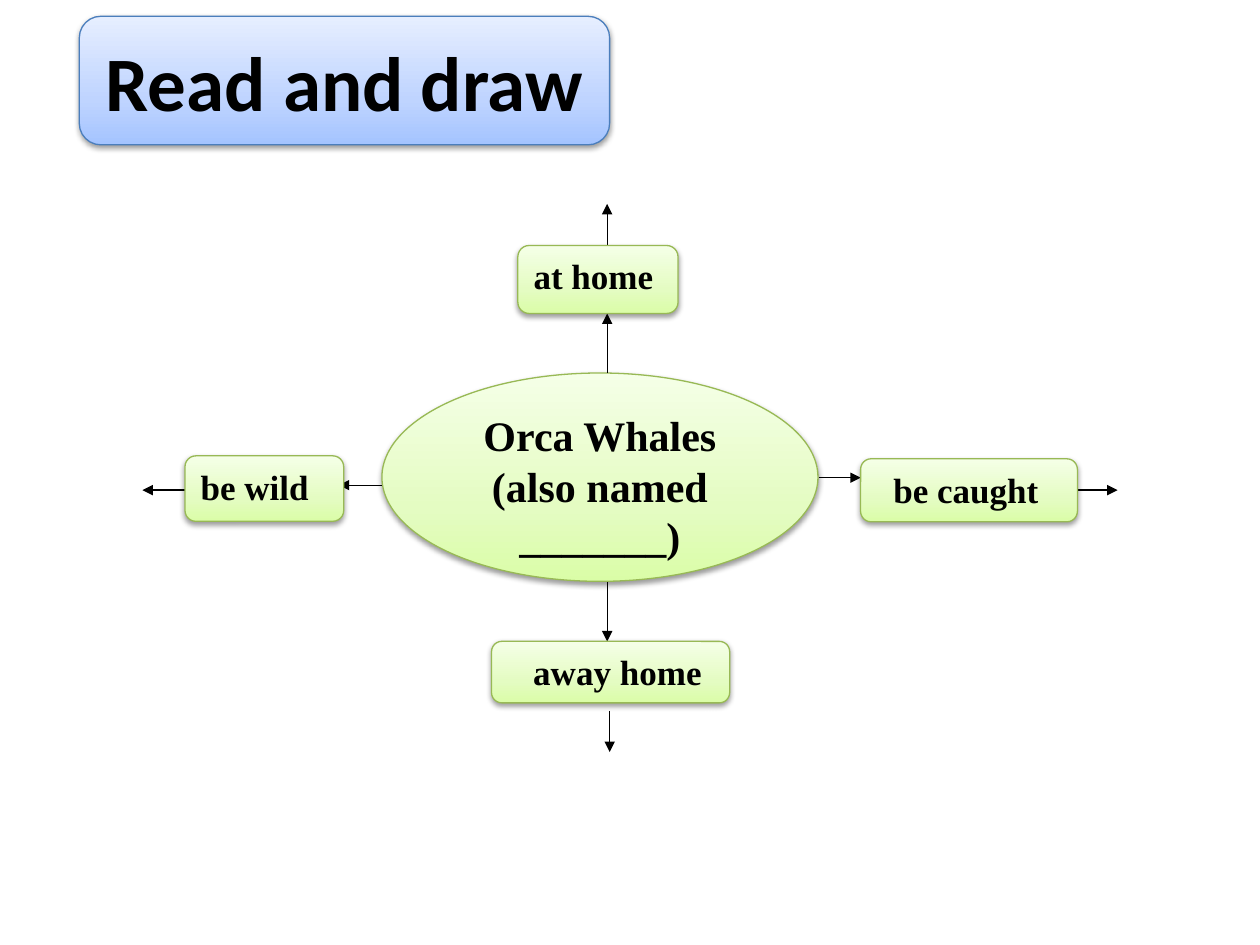
from dataclasses import dataclass

from lxml import etree
from pptx import Presentation
from pptx.dml.color import RGBColor
from pptx.enum.shapes import MSO_CONNECTOR, MSO_SHAPE
from pptx.enum.text import MSO_ANCHOR, PP_ALIGN
from pptx.oxml import parse_xml
from pptx.oxml.ns import nsdecls, qn
from pptx.util import Cm, Pt

ELLIPSE = MSO_SHAPE.OVAL
ROUNDED = MSO_SHAPE.ROUNDED_RECTANGLE
STRAIGHT = MSO_CONNECTOR.STRAIGHT
CENTER = PP_ALIGN.CENTER
JUSTIFY = PP_ALIGN.JUSTIFY
TOP = MSO_ANCHOR.TOP
MIDDLE = MSO_ANCHOR.MIDDLE


@dataclass
class Theme:
    ink = RGBColor.from_string("000000")
    green = ("DAFDA7", "E4FCC2", "F5FFE7")
    green_line = RGBColor.from_string("98B955")
    blue = ("A4C4FF", "BFD4FF", "E6EEFF")
    blue_line = RGBColor.from_string("4B7EBC")
    heading_font = "Calibri"
    body_font = "Times New Roman"
    heading_size = Pt(44)
    topic_size = Pt(24)
    branch_size = Pt(20)
    line_width = Pt(0.75)


theme = Theme()


def add_panel(kind, place, colours, line_colour):
    panel = page.shapes.add_shape(kind, *map(Cm, place))
    properties = panel._element.spPr
    stops = "".join(
        f'<a:gs pos="{position}"><a:srgbClr val="{colour}"/></a:gs>'
        for position, colour in zip((0, 35000, 100000), colours)
    )
    properties.append(parse_xml(
        f'<a:gradFill {nsdecls("a")} rotWithShape="1"><a:gsLst>{stops}</a:gsLst>'
        '<a:lin ang="16200000" scaled="0"/></a:gradFill>'
    ))
    panel.line.color.rgb = line_colour
    panel.line.width = theme.line_width
    properties.append(parse_xml(
        f'<a:effectLst {nsdecls("a")}>'
        '<a:outerShdw blurRad="40000" dist="20000" dir="5400000" rotWithShape="0">'
        '<a:srgbClr val="000000"><a:alpha val="38000"/></a:srgbClr>'
        '</a:outerShdw></a:effectLst>'
    ))
    return panel


def write(shape, lines, font, size, alignment, anchor):
    frame = shape.text_frame
    frame.word_wrap = True
    frame.vertical_anchor = anchor
    frame.text = "\n".join(lines)
    for para in frame.paragraphs:
        para.alignment = alignment
        para.font.name = font
        para.font.size = size
        para.font.bold = True
        para.font.color.rgb = theme.ink


deck = Presentation()
deck.slide_width = Cm(25.4)
deck.slide_height = Cm(19.05)
page = deck.slides.add_slide(deck.slide_layouts[5])

topic = add_panel(ELLIPSE, (7.7, 7.52, 8.79, 4.2), theme.green, theme.green_line)
write(topic, ["Orca Whales", "(also named _______)"],
      theme.body_font, theme.topic_size, CENTER, TOP)

arrows = [
    (12.24, 7.52, 12.24, 6.32),
    (7.7, 9.78, 6.83, 9.78),
    (16.51, 9.63, 17.35, 9.63),
    (12.24, 11.73, 12.24, 12.93),
    (12.24, 4.93, 12.24, 4.11),
    (3.73, 9.88, 2.87, 9.88),
    (12.29, 14.33, 12.29, 15.16),
    (21.69, 9.88, 22.53, 9.88),
]
for ends in arrows:
    arrow = page.shapes.add_connector(STRAIGHT, *map(Cm, ends))
    arrow.line.color.rgb = theme.ink
    arrow.line.width = theme.line_width
    etree.SubElement(arrow.line._get_or_add_ln(), qn("a:tailEnd"), type="triangle")
    etree.SubElement(arrow._element.spPr, qn("a:effectLst"))

branches = [
    ("at home", (10.44, 4.95, 3.23, 1.37), 0.25),
    ("away home", (9.91, 12.93, 4.8, 1.24), 0.78),
    ("be wild", (3.73, 9.19, 3.2, 1.32), 0.25),
    ("be caught", (17.35, 9.25, 4.37, 1.27), 0.6),
]
for label, place, inset in branches:
    branch = add_panel(ROUNDED, place, theme.green, theme.green_line)
    branch.text_frame.margin_left = Cm(inset)
    write(branch, [label], theme.body_font, theme.branch_size, JUSTIFY, TOP)

heading_place = (1.6, 0.33, 10.69, 2.59)
add_panel(ROUNDED, heading_place, theme.blue, theme.blue_line)
title = page.shapes.title
title.left, title.top, title.width, title.height = map(Cm, heading_place)
write(title, ["Read and draw"], theme.heading_font, theme.heading_size, CENTER, MIDDLE)
page.shapes._spTree.append(title._element)

deck.save("out.pptx")
